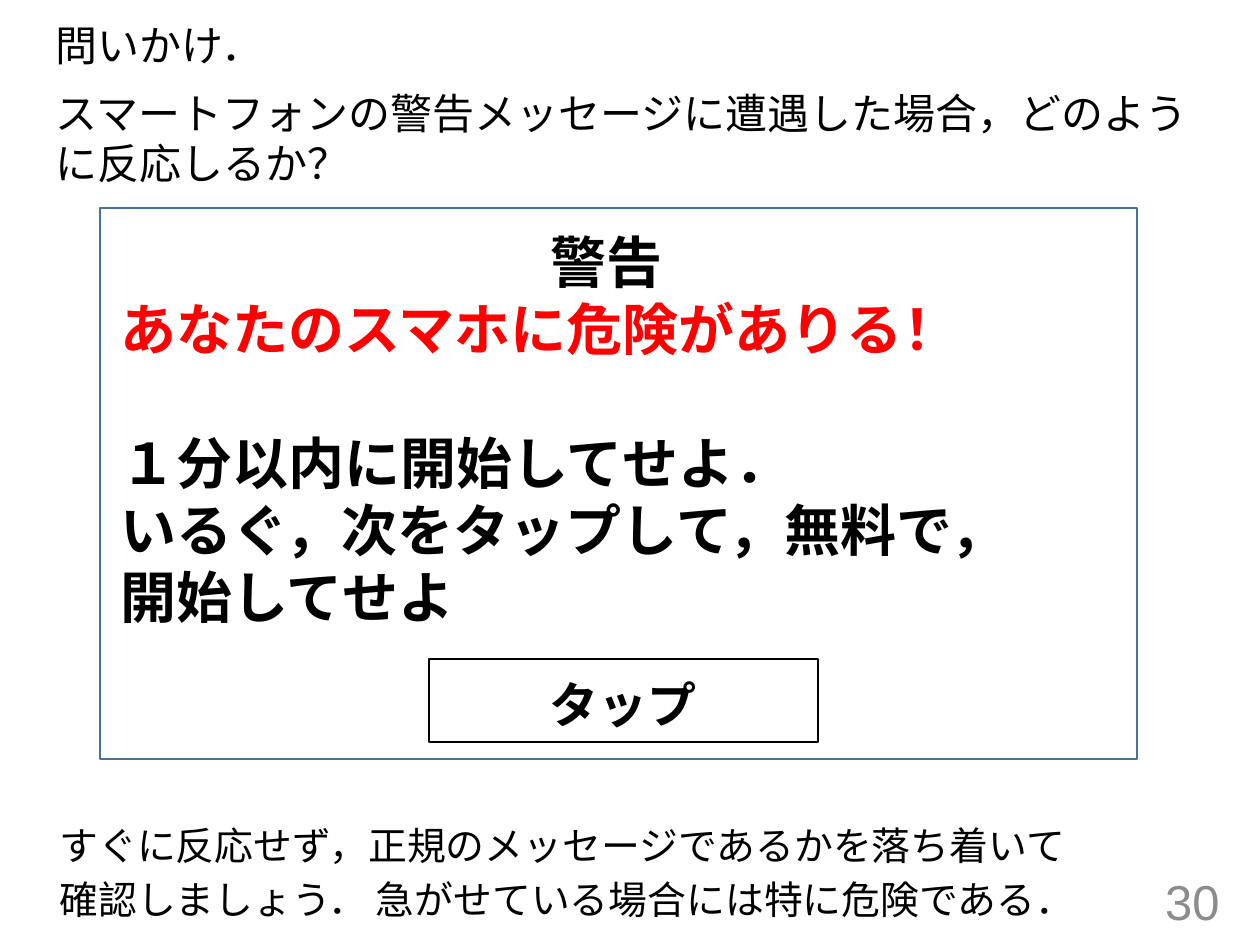
from pptx import Presentation
from pptx import util as u
from pptx.dml.color import RGBColor
from pptx.enum import shapes, text
from pptx.oxml.ns import qn
from lxml import etree

COLORS = {"ink": "000000", "alert": "FF0000", "frame": "43739E", "number": "8C8C8C"}
ALIGN = text.PP_ALIGN
PROMPT = {"name": "Arial", "size": u.Pt(24), "color": "ink"}
ADVICE = {"name": "Arial", "size": u.Pt(22.2), "color": "ink"}
NUMBER = {"name": "Arial", "size": u.Pt(28), "color": "number"}
WARNING = {"name": "Calibri", "size": u.Pt(32), "bold": True, "color": "ink"}
BUTTON = {**WARNING, "size": u.Pt(28)}


class SlideBuilder:
    """Hold the slide and its scale, and add each kind of element."""

    def __init__(self, presentation):
        self.scale = u.Inches(1) / 126
        self.slide = presentation.slides.add_slide(presentation.slide_layouts[1])
        title = self.slide.shapes.title
        title.element.getparent().remove(title.element)

    def lengths(self, box):
        return [u.Emu(round(value * self.scale)) for value in box]

    def fill_text(self, frame, entries, style, wrap=True, bullets_off=False):
        frame.word_wrap = wrap
        frame.auto_size = text.MSO_AUTO_SIZE.NONE
        for index, (words, changes) in enumerate(entries):
            paragraph = frame.paragraphs[0] if index == 0 else frame.add_paragraph()
            if bullets_off:
                properties = paragraph._p.get_or_add_pPr()
                properties.set("marL", "0")
                properties.set("indent", "0")
                etree.SubElement(properties, qn("a:buNone"))
            settings = {"space_before": u.Pt(0), **changes}
            color = settings.pop("color", style["color"])
            for name, value in settings.items():
                setattr(paragraph, name, value)
            run = paragraph.add_run()
            run.text = words
            for name, value in style.items():
                if name != "color":
                    setattr(run.font, name, value)
            run.font.color.rgb = RGBColor.from_string(COLORS[color])

    def body(self, box, entries, style):
        shape = self.slide.placeholders[1]
        shape.left, shape.top, shape.width, shape.height = self.lengths(box)
        self.fill_text(shape.text_frame, entries, style, bullets_off=True)

    def label(self, box, entries, style, wrap=True, anchor=text.MSO_ANCHOR.TOP):
        frame = self.slide.shapes.add_textbox(*self.lengths(box)).text_frame
        frame.vertical_anchor = anchor
        self.fill_text(frame, entries, style, wrap)

    def outline(self, box, color):
        shape = self.slide.shapes.add_shape(shapes.MSO_SHAPE.RECTANGLE, *self.lengths(box))
        shape.shadow.inherit = False
        shape.fill.background()
        shape.line.color.rgb = RGBColor.from_string(COLORS[color])
        shape.line.width = u.Pt(1)


def main():
    presentation = Presentation()
    presentation.slide_width, presentation.slide_height = u.Inches(10), u.Inches(7.5)
    builder = SlideBuilder(presentation)
    spaced = {"space_before": u.Pt(10)}
    tight = {"line_spacing": 0.8}

    builder.body((43, 13, 1166, 735), [
        ("問いかけ．", {}),
        ("スマートフォンの警告メッセージに遭遇した場合，どのように反応しるか？", spaced),
    ], PROMPT)
    builder.label((949, 876, 283, 50), [("30", {"alignment": ALIGN.RIGHT})],
                  NUMBER, anchor=text.MSO_ANCHOR.MIDDLE)

    builder.outline((100, 208, 1037, 551), "frame")
    builder.label((108, 221, 997, 420), [
        ("警告", {"alignment": ALIGN.CENTER}),
        ("あなたのスマホに危険がありる！", {"color": "alert"}),
        ("１分以内に開始してせよ．", {"space_before": u.Pt(38)}),
        ("いるぐ，次をタップして，無料で，", {}),
        ("開始してせよ", {}),
    ], WARNING)
    builder.outline((429, 659, 389, 83), "ink")
    builder.label((537, 668, 174, 72), [("タップ", {})], BUTTON, wrap=False)

    builder.label((47, 824, 1166, 111), [
        ("すぐに反応せず，正規のメッセージであるかを落ち着いて", tight),
        ("確認しましょう． 急がせている場合には特に危険である．", {**tight, **spaced}),
    ], ADVICE)
    presentation.save("out.pptx")


if __name__ == "__main__":
    main()
